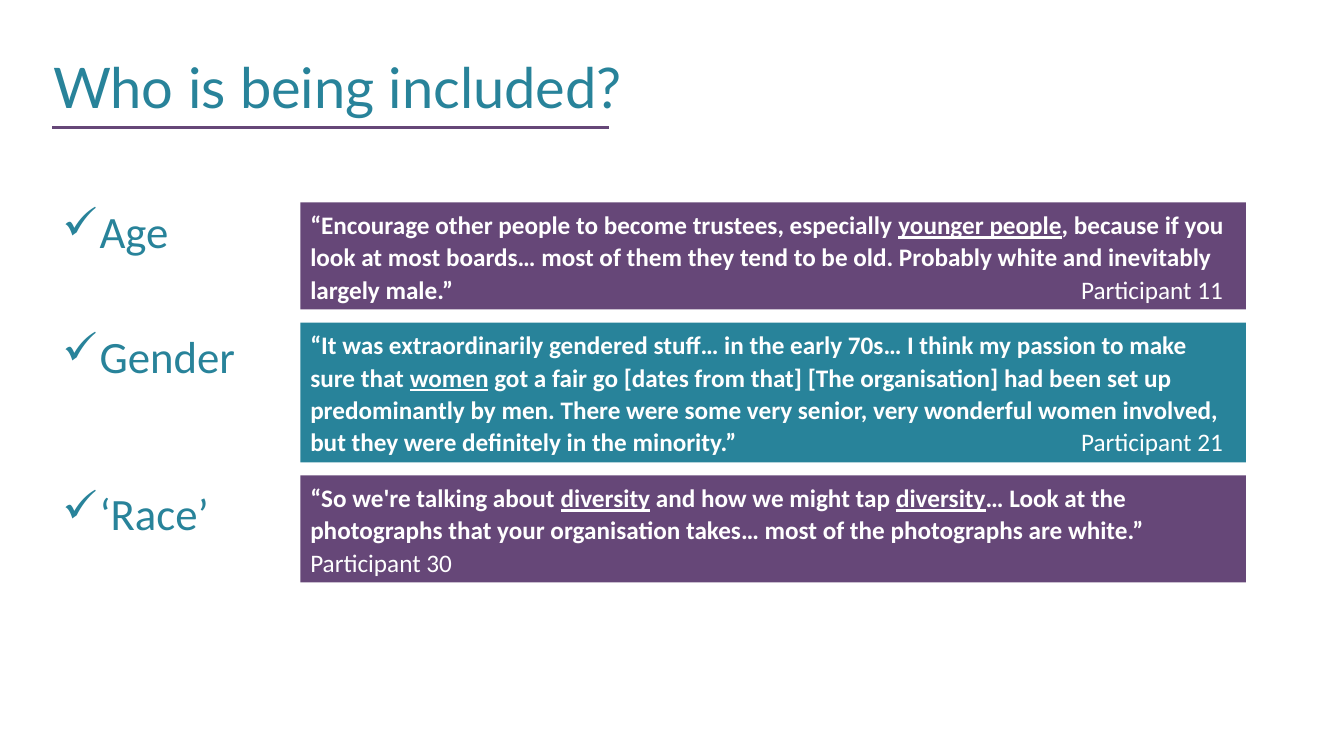
from dataclasses import dataclass

from lxml.etree import SubElement
from pptx import Presentation
from pptx.dml.color import RGBColor
from pptx.enum.shapes import MSO_CONNECTOR, MSO_SHAPE
from pptx.enum.text import MSO_ANCHOR, MSO_AUTO_SIZE, PP_ALIGN
from pptx.oxml.ns import qn
from pptx.util import Cm, Pt


@dataclass(frozen=True)
class Theme:
    teal: RGBColor = RGBColor(0x28, 0x83, 0x9A)
    purple: RGBColor = RGBColor(0x66, 0x47, 0x78)
    white: RGBColor = RGBColor(0xFF, 0xFF, 0xFF)
    title_font: str = "Lato"
    body_font: str = "Calibri"
    title_size: int = 40
    topic_size: int = 32
    quote_size: int = 18


THEME = Theme()
TITLE = "Who is being included?"
TOPICS = [
    {
        "topic": "Age",
        "drop": 0.05,
        "height": 2.7,
        "fill": THEME.purple,
        "quote": [
            ("“Encourage other people to become trustees, especially ", False),
            ("younger people", True),
            (", because if you look at most boards… most of them they tend to be old. "
             "Probably white and inevitably largely male.”", False),
        ],
        "speaker": "Participant 11",
        "speaker_at_right": True,
    },
    {
        "topic": "Gender",
        "drop": 0.17,
        "height": 3.52,
        "fill": THEME.teal,
        "quote": [
            ("“It was extraordinarily gendered stuff… in the early 70s… "
             "I think my passion to make sure that ", False),
            ("women", True),
            (" got a fair go [dates from that] [The organisation] had been set up "
             "predominantly by men. There were some very senior, very wonderful women "
             "involved, but they were definitely in the minority.”", False),
        ],
        "speaker": "Participant 21",
        "speaker_at_right": True,
    },
    {
        "topic": "‘Race’",
        "drop": 0.3,
        "height": 2.7,
        "fill": THEME.purple,
        "quote": [
            ("“So we're talking about ", False),
            ("diversity", True),
            (" and how we might tap ", False),
            ("diversity", True),
            ("… Look at the photographs that your organisation takes… "
             "most of the photographs are white.”", False),
        ],
        "speaker": "Participant 30",
        "speaker_at_right": False,
    },
]

MARGIN = 1.32
QUOTE_LEFT, QUOTE_WIDTH = 7.57, 23.83
FIRST_TOP, GAP = 5.1, 0.33
TOPIC_WIDTH, TOPIC_HEIGHT = 6, 1.6
TOPIC_INDENT = Cm(0.94)
SPEAKER_TAB = Cm(23)


def add_run(paragraph, text, font, size, color, bold=False, underline=False):
    run = paragraph.add_run()
    run.text = text
    run.font.name = font
    run.font.size = Pt(size)
    run.font.color.rgb = color
    run.font.bold = bold
    run.font.underline = underline


def add_text_box(slide, left, top, width, height, anchor):
    frame = slide.shapes.add_textbox(Cm(left), Cm(top), Cm(width), Cm(height)).text_frame
    frame.word_wrap = True
    frame.vertical_anchor = anchor
    paragraph = frame.paragraphs[0]
    paragraph.line_spacing = 0.9
    return paragraph


def add_title(slide):
    title = add_text_box(slide, 1.09, 1.35, 31.45, 1.88, MSO_ANCHOR.MIDDLE)
    add_run(title, TITLE, THEME.title_font, THEME.title_size, THEME.teal)
    rule = slide.shapes.add_connector(
        MSO_CONNECTOR.STRAIGHT, Cm(MARGIN), Cm(3.22), Cm(15.34), Cm(3.22))
    rule.line.color.rgb = THEME.purple
    rule.line.width = Pt(2.25)
    SubElement(rule._element.spPr, qn("a:effectLst"))


def add_topic(slide, text, top):
    topic = add_text_box(slide, MARGIN, top, TOPIC_WIDTH, TOPIC_HEIGHT, MSO_ANCHOR.TOP)
    properties = topic._p.get_or_add_pPr()
    properties.set("marL", str(TOPIC_INDENT))
    properties.set("indent", str(-TOPIC_INDENT))
    SubElement(properties, qn("a:buChar"), char="✓")
    add_run(topic, text, THEME.body_font, THEME.topic_size, THEME.teal)


def add_quote(slide, entry, top):
    box = slide.shapes.add_shape(
        MSO_SHAPE.RECTANGLE, Cm(QUOTE_LEFT), Cm(top), Cm(QUOTE_WIDTH), Cm(entry["height"]))
    box.shadow.inherit = False
    box.fill.solid()
    box.fill.fore_color.rgb = entry["fill"]
    box.line.fill.background()
    frame = box.text_frame
    frame.word_wrap = True
    frame.vertical_anchor = MSO_ANCHOR.TOP
    frame.auto_size = MSO_AUTO_SIZE.SHAPE_TO_FIT_TEXT
    quote = frame.paragraphs[0]
    quote.alignment = PP_ALIGN.LEFT
    quote.line_spacing = 1.07
    quote.space_after = Pt(8)
    style = (THEME.body_font, THEME.quote_size, THEME.white)
    for text, underline in entry["quote"]:
        add_run(quote, text, *style, bold=True, underline=underline)
    speaker = entry["speaker"]
    if entry["speaker_at_right"]:
        tabs = SubElement(quote._p.get_or_add_pPr(), qn("a:tabLst"))
        SubElement(tabs, qn("a:tab"), pos=str(SPEAKER_TAB), algn="r")
        speaker = "\t" + speaker
    else:
        quote.add_line_break()
    add_run(quote, speaker, *style)


def main():
    deck = Presentation()
    deck.slide_width, deck.slide_height = Cm(33.87), Cm(19.05)
    slide = deck.slides.add_slide(deck.slide_layouts[6])
    add_title(slide)
    top = FIRST_TOP
    for entry in TOPICS:
        add_topic(slide, entry["topic"], top + entry["drop"])
        add_quote(slide, entry, top)
        top += entry["height"] + GAP
    deck.save("out.pptx")


if __name__ == "__main__":
    main()
